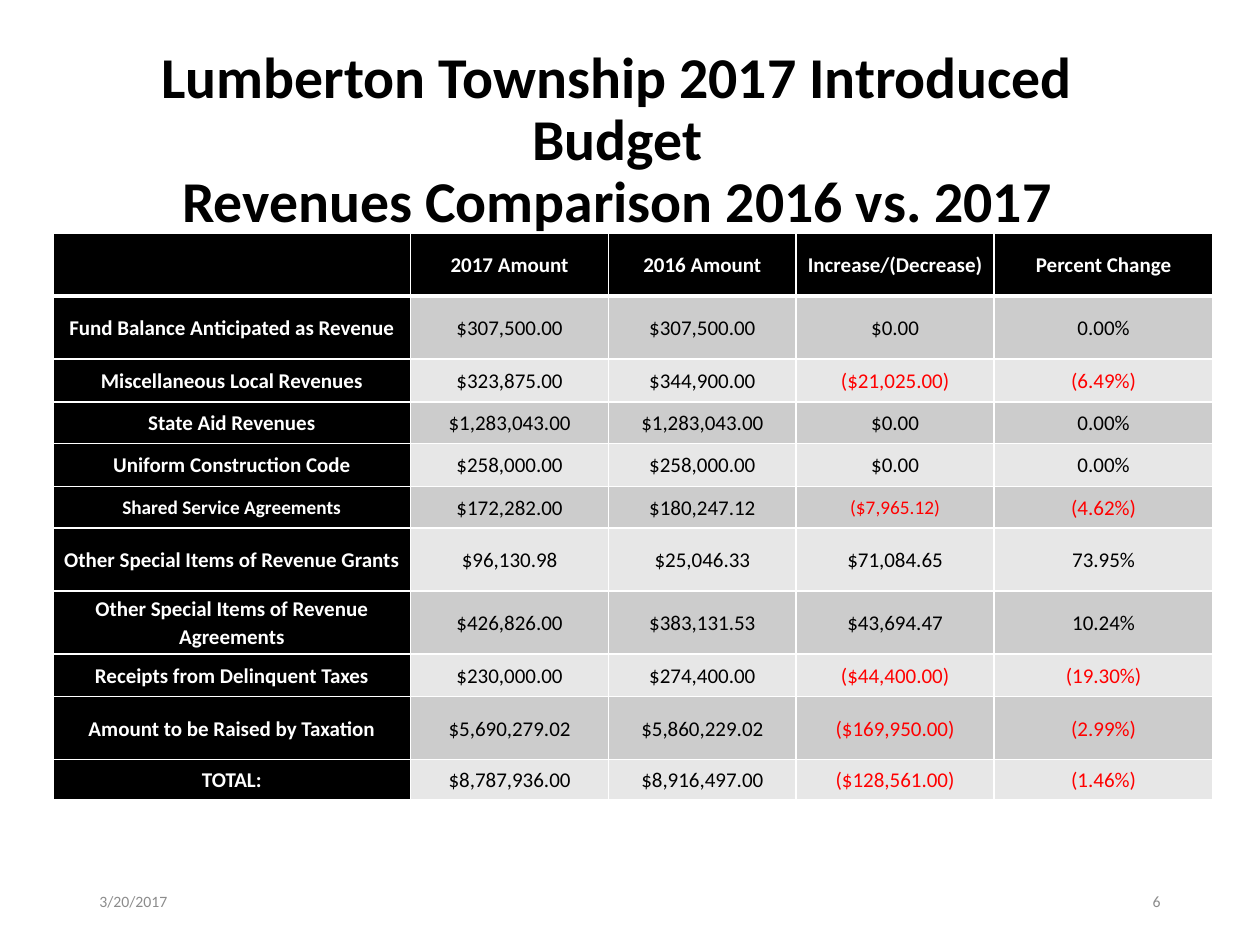
"""Build the revenue comparison slide of a township budget."""
from dataclasses import dataclass

from lxml.etree import SubElement
from pptx import Presentation
from pptx.dml.color import RGBColor
from pptx.enum.text import MSO_ANCHOR, PP_ALIGN
from pptx.oxml.ns import qn
from pptx.slide import Slide
from pptx.table import _Cell
from pptx.text.text import TextFrame
from pptx.util import Inches, Pt


@dataclass(frozen=True)
class Theme:
    """Colours, font and type sizes of the slide."""
    font: str = "Calibri"
    black: str = "000000"
    white: str = "FFFFFF"
    decrease: str = "FF0000"
    footer: str = "8C8C8C"
    bands: tuple[str, str] = ("CCCCCC", "E7E7E7")
    title_size: float = 33
    cell_size: float = 12
    small_size: float = 11
    footer_size: float = 9
    thin_rule: float = 1
    thick_rule: float = 3


@dataclass(frozen=True)
class TextStyle:
    """Look of one piece of text."""
    size: float
    color: str
    bold: bool = False
    align: PP_ALIGN = PP_ALIGN.CENTER
    spacing: float = 1.0


@dataclass(frozen=True)
class Caption:
    """Text placed outside the table."""
    text: str
    left: float
    top: float
    width: float
    height: float
    style: TextStyle
    right_margin: float = 0.1


@dataclass(frozen=True)
class RevenueRow:
    """One table row, with the columns set in smaller type."""
    height: float
    values: tuple[str, ...]
    small_columns: tuple[int, ...] = ()


THEME = Theme()
TABLE_LEFT, TABLE_TOP = 0.42, 1.85
COLUMN_WIDTHS = (2.84, 1.57, 1.49, 1.57, 1.74)
REVENUES = (
    RevenueRow(0.5, ("", "2017 Amount", "2016 Amount", "Increase/(Decrease)", "Percent Change")),
    RevenueRow(0.5, ("Fund Balance Anticipated as Revenue", "$307,500.00", "$307,500.00", "$0.00", "0.00%")),
    RevenueRow(0.34, ("Miscellaneous Local Revenues", "$323,875.00", "$344,900.00", "($21,025.00)", "(6.49%)")),
    RevenueRow(0.33, ("State Aid Revenues", "$1,283,043.00", "$1,283,043.00", "$0.00", "0.00%")),
    RevenueRow(0.34, ("Uniform Construction Code", "$258,000.00", "$258,000.00", "$0.00", "0.00%")),
    RevenueRow(0.33, ("Shared Service Agreements", "$172,282.00", "$180,247.12", "($7,965.12)", "(4.62%)"), (0, 3)),
    RevenueRow(0.5, ("Other Special Items of Revenue Grants", "$96,130.98", "$25,046.33", "$71,084.65", "73.95%")),
    RevenueRow(0.5, ("Other Special Items of Revenue\nAgreements", "$426,826.00", "$383,131.53", "$43,694.47", "10.24%")),
    RevenueRow(0.34, ("Receipts from Delinquent Taxes", "$230,000.00", "$274,400.00", "($44,400.00)", "(19.30%)")),
    RevenueRow(0.5, ("Amount to be Raised by Taxation", "$5,690,279.02", "$5,860,229.02", "($169,950.00)", "(2.99%)")),
    RevenueRow(0.32, ("TOTAL:", "$8,787,936.00", "$8,916,497.00", "($128,561.00)", "(1.46%)")),
)
CAPTIONS = (
    Caption("3/20/2017", 0.69, 6.95, 2.25, 0.4,
            TextStyle(THEME.footer_size, THEME.footer, align=PP_ALIGN.LEFT)),
    Caption("6", 7.06, 6.95, 2.25, 0.4,
            TextStyle(THEME.footer_size, THEME.footer, align=PP_ALIGN.RIGHT)),
    Caption("Lumberton Township 2017 Introduced Budget\nRevenues Comparison 2016 vs. 2017",
            0.69, 0.4, 8.62, 1.45,
            TextStyle(THEME.title_size, THEME.black, bold=True, spacing=0.9), right_margin=0.3),
)


def write_text(frame: TextFrame, text: str, style: TextStyle) -> None:
    """Fill a text frame with one paragraph per line."""
    frame.text = text
    font_format = {"name": THEME.font, "size": Pt(style.size), "bold": style.bold}
    for paragraph in frame.paragraphs:
        paragraph.alignment = style.align
        paragraph.line_spacing = style.spacing
        for run in paragraph.runs:
            for attribute, value in font_format.items():
                setattr(run.font, attribute, value)
            run.font.color.rgb = RGBColor.from_string(style.color)


def draw_borders(cell: _Cell, top: float, bottom: float) -> None:
    """Give a cell white rules on its four sides."""
    properties = cell._tc.get_or_add_tcPr()
    widths = {"a:lnL": THEME.thin_rule, "a:lnR": THEME.thin_rule, "a:lnT": top, "a:lnB": bottom}
    for side, width in widths.items():
        rule = SubElement(properties, qn(side), w=str(Pt(width)))
        SubElement(SubElement(rule, qn("a:solidFill")), qn("a:srgbClr"), val=THEME.white)


def draw_cell(cell: _Cell, row: int, column: int) -> None:
    """Write, fill and rule one cell by its place in the table."""
    revenue = REVENUES[row]
    text = revenue.values[column]
    is_heading = row == 0 or column == 0
    color = THEME.white if is_heading else THEME.decrease if text.startswith("(") else THEME.black
    size = THEME.small_size if column in revenue.small_columns else THEME.cell_size
    cell_format = {
        "vertical_anchor": MSO_ANCHOR.MIDDLE,
        "margin_left": Inches(0.07),
        "margin_right": Inches(0.07),
        "margin_top": 0,
        "margin_bottom": 0,
    }
    for attribute, value in cell_format.items():
        setattr(cell, attribute, value)
    write_text(cell.text_frame, text, TextStyle(size, color, is_heading, spacing=1.07))
    draw_borders(cell,
                 top=THEME.thick_rule if row == 1 else THEME.thin_rule,
                 bottom=THEME.thick_rule if row == 0 else THEME.thin_rule)
    cell.fill.solid()
    fill = THEME.black if is_heading else THEME.bands[(row - 1) % 2]
    cell.fill.fore_color.rgb = RGBColor.from_string(fill)


def draw_revenues(slide: Slide) -> None:
    """Draw the revenue table."""
    height = sum(revenue.height for revenue in REVENUES)
    revenues = slide.shapes.add_table(
        len(REVENUES), len(COLUMN_WIDTHS), Inches(TABLE_LEFT), Inches(TABLE_TOP),
        Inches(sum(COLUMN_WIDTHS)), Inches(height)).table
    for column, width in zip(revenues.columns, COLUMN_WIDTHS):
        column.width = Inches(width)
    for row, revenue in enumerate(REVENUES):
        revenues.rows[row].height = Inches(revenue.height)
        for column in range(len(COLUMN_WIDTHS)):
            draw_cell(revenues.cell(row, column), row, column)


def draw_caption(slide: Slide, caption: Caption) -> None:
    """Draw the title or a footer text."""
    frame = slide.shapes.add_textbox(
        Inches(caption.left), Inches(caption.top),
        Inches(caption.width), Inches(caption.height)).text_frame
    frame_format = {
        "word_wrap": True,
        "vertical_anchor": MSO_ANCHOR.MIDDLE,
        "margin_right": Inches(caption.right_margin),
    }
    for attribute, value in frame_format.items():
        setattr(frame, attribute, value)
    write_text(frame, caption.text, caption.style)


def main() -> None:
    """Build and save the presentation."""
    presentation = Presentation()
    presentation.slide_width, presentation.slide_height = Inches(10), Inches(7.5)
    slide = presentation.slides.add_slide(presentation.slide_layouts[6])
    draw_revenues(slide)
    for caption in CAPTIONS:
        draw_caption(slide, caption)
    presentation.save("out.pptx")


if __name__ == "__main__":
    main()
